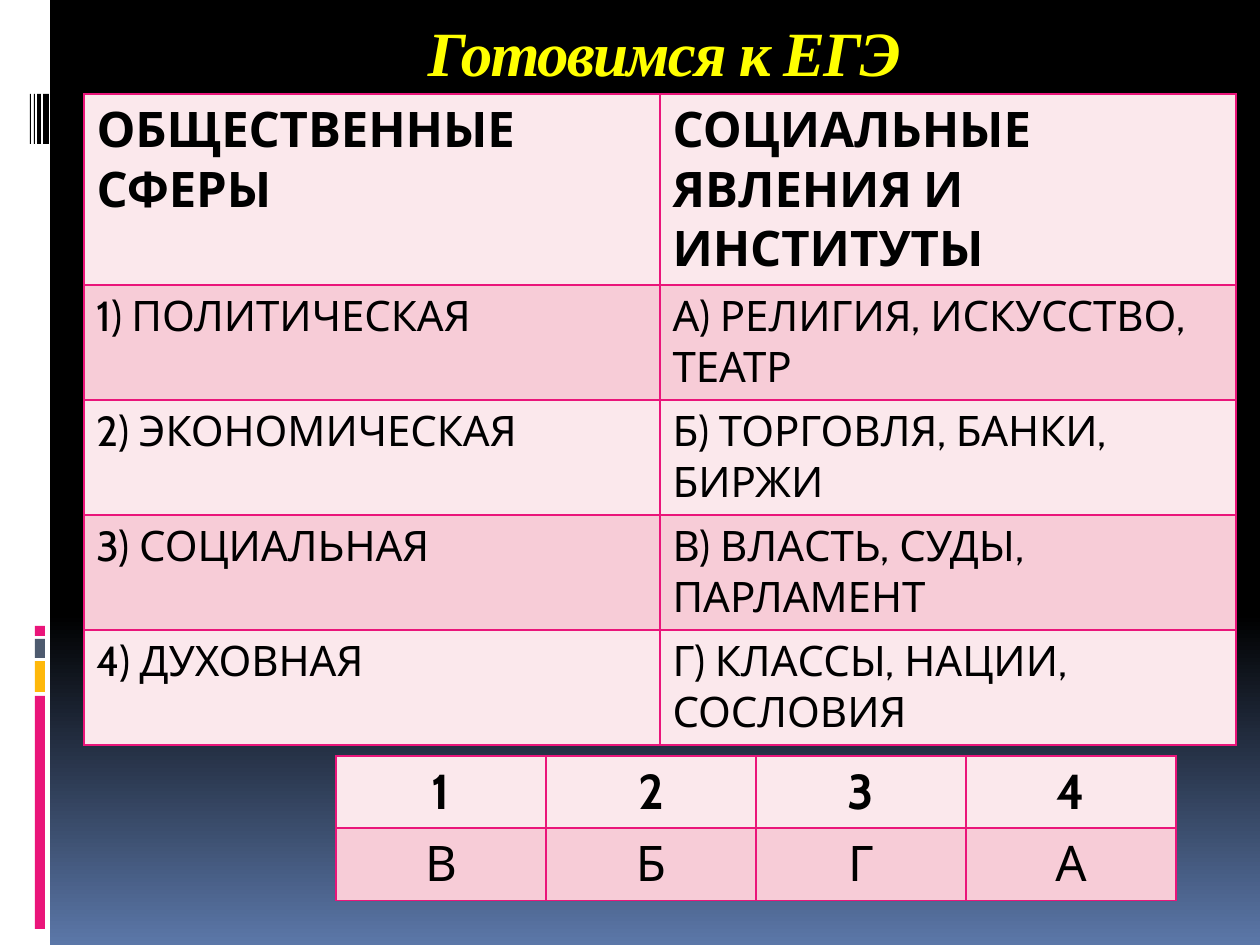
from copy import deepcopy
from dataclasses import dataclass
from typing import NamedTuple

from lxml import etree
from pptx import Presentation
from pptx.dml.color import RGBColor
from pptx.enum.shapes import MSO_SHAPE
from pptx.enum.text import MSO_ANCHOR, MSO_AUTO_SIZE, PP_ALIGN
from pptx.oxml.ns import qn
from pptx.util import Emu, Pt

RECTANGLE = MSO_SHAPE.RECTANGLE
TOP = MSO_ANCHOR.TOP
LEFT, CENTER = PP_ALIGN.LEFT, PP_ALIGN.CENTER
TITLE_ONLY = 5
PX_PER_INCH = 126


@dataclass(frozen=True)
class Theme:
    white: str = "FFFFFF"
    black: str = "000000"
    pink: str = "EA157A"
    amber: str = "FEB80A"
    slate: str = "4E5B6F"
    sky: str = "5B77A8"
    title: str = "FFFF00"
    row_fills: tuple[str, str] = ("FBE8EC", "F7CCD7")
    title_font: str = "Times New Roman"
    table_font: str = "Cabin"
    title_size: int = 36
    large: int = 28
    medium: int = 24


THEME = Theme()


class Bar(NamedTuple):
    left: int
    top: int
    width: int
    height: int
    color: str


class Grid(NamedTuple):
    left: int
    top: int
    column_width: int
    row_heights: list[int]
    body_size: int
    alignment: PP_ALIGN
    rows: list[tuple[str, ...]]


BARS = [
    Bar(0, 0, 50, 945, THEME.white),
    Bar(35, 696, 10, 233, THEME.pink),
    Bar(35, 661, 10, 31, THEME.amber),
    Bar(35, 639, 10, 19, THEME.slate),
    Bar(35, 626, 10, 10, THEME.pink),
    *(Bar(left, 94, width, 50, THEME.black)
      for left, width in ((43, 6), (37, 4), (34, 1), (30, 1))),
]

SPHERES = Grid(84, 94, 576, [191] + [115] * 4, THEME.medium, LEFT, [
    ("ОБЩЕСТВЕННЫЕ СФЕРЫ", "СОЦИАЛЬНЫЕ ЯВЛЕНИЯ И ИНСТИТУТЫ"),
    ("1) ПОЛИТИЧЕСКАЯ", "А) РЕЛИГИЯ, ИСКУССТВО, ТЕАТР"),
    ("2) ЭКОНОМИЧЕСКАЯ", "Б) ТОРГОВЛЯ, БАНКИ, БИРЖИ"),
    ("3) СОЦИАЛЬНАЯ", "В) ВЛАСТЬ, СУДЫ, ПАРЛАМЕНТ"),
    ("4) ДУХОВНАЯ", "Г) КЛАССЫ, НАЦИИ, СОСЛОВИЯ"),
])
ANSWERS = Grid(336, 756, 210, [72, 72], THEME.large, CENTER,
               [("1", "2", "3", "4"), ("В", "Б", "Г", "А")])


def px(length: int) -> Emu:
    return Emu(round(length * 914400 / PX_PER_INCH))


def rgb(color: str) -> RGBColor:
    return RGBColor.from_string(color)


def paint_background(slide) -> None:
    """Black down to 65 % of the height, then fading to blue."""
    fill = slide.background.fill
    fill.gradient()
    fill.gradient_angle = 270
    stop_list = slide.element.find(".//" + qn("a:gsLst"))
    stop_list.append(deepcopy(stop_list[-1]))
    colors = (THEME.black, THEME.black, THEME.sky)
    for stop, position, color in zip(fill.gradient_stops, (0, 0.65, 1), colors):
        stop.position = position
        stop.color.rgb = rgb(color)


def add_bar(slide, bar: Bar) -> None:
    shape = slide.shapes.add_shape(RECTANGLE, px(bar.left), px(bar.top),
                                   px(bar.width), px(bar.height))
    shape.shadow.inherit = False
    shape.fill.solid()
    shape.fill.fore_color.rgb = rgb(bar.color)
    shape.line.fill.background()


def add_run(paragraph, text: str, font: str, size: int, color: str, bold: bool):
    run = paragraph.add_run()
    run.text = text
    run.font.name = font
    run.font.size = Pt(size)
    run.font.color.rgb = rgb(color)
    run.font.bold = bold
    return run


def set_title(slide, text: str) -> None:
    title = slide.shapes.title
    title.left, title.top = px(136), px(0)
    title.width, title.height = px(1071), px(126)
    frame = title.text_frame
    frame.auto_size = MSO_AUTO_SIZE.NONE
    frame.vertical_anchor = TOP
    frame.margin_top = px(14)
    frame.margin_right = px(27)
    paragraph = frame.paragraphs[0]
    paragraph.alignment = CENTER
    run = add_run(paragraph, text, THEME.title_font, THEME.title_size,
                  THEME.title, True)
    run.font.italic = True
    run.font._element.set("spc", "-100")


def add_borders(cell) -> None:
    properties = cell._tc.get_or_add_tcPr()
    for side in ("a:lnL", "a:lnR", "a:lnT", "a:lnB"):
        line = etree.SubElement(properties, qn(side), w=str(Pt(1)))
        solid = etree.SubElement(line, qn("a:solidFill"))
        etree.SubElement(solid, qn("a:srgbClr"), val=THEME.pink)


def add_grid(slide, grid: Grid) -> None:
    column_count = len(grid.rows[0])
    table = slide.shapes.add_table(
        len(grid.rows), column_count, px(grid.left), px(grid.top),
        px(grid.column_width * column_count), px(sum(grid.row_heights))).table
    for column in table.columns:
        column.width = px(grid.column_width)
    for row_index, texts in enumerate(grid.rows):
        table.rows[row_index].height = px(grid.row_heights[row_index])
        is_header = row_index == 0
        size = THEME.large if is_header else grid.body_size
        for column_index, text in enumerate(texts):
            cell = table.cell(row_index, column_index)
            add_borders(cell)
            cell.fill.solid()
            cell.fill.fore_color.rgb = rgb(THEME.row_fills[row_index % 2])
            paragraph = cell.text_frame.paragraphs[0]
            paragraph.alignment = grid.alignment
            add_run(paragraph, text, THEME.table_font, size, THEME.black,
                    is_header)


def main() -> None:
    presentation = Presentation()
    presentation.slide_width, presentation.slide_height = px(1260), px(945)
    slide = presentation.slides.add_slide(
        presentation.slide_layouts[TITLE_ONLY])
    paint_background(slide)
    for bar in BARS:
        add_bar(slide, bar)
    set_title(slide, "Готовимся к ЕГЭ")
    for grid in (SPHERES, ANSWERS):
        add_grid(slide, grid)
    presentation.save("out.pptx")


if __name__ == "__main__":
    main()
